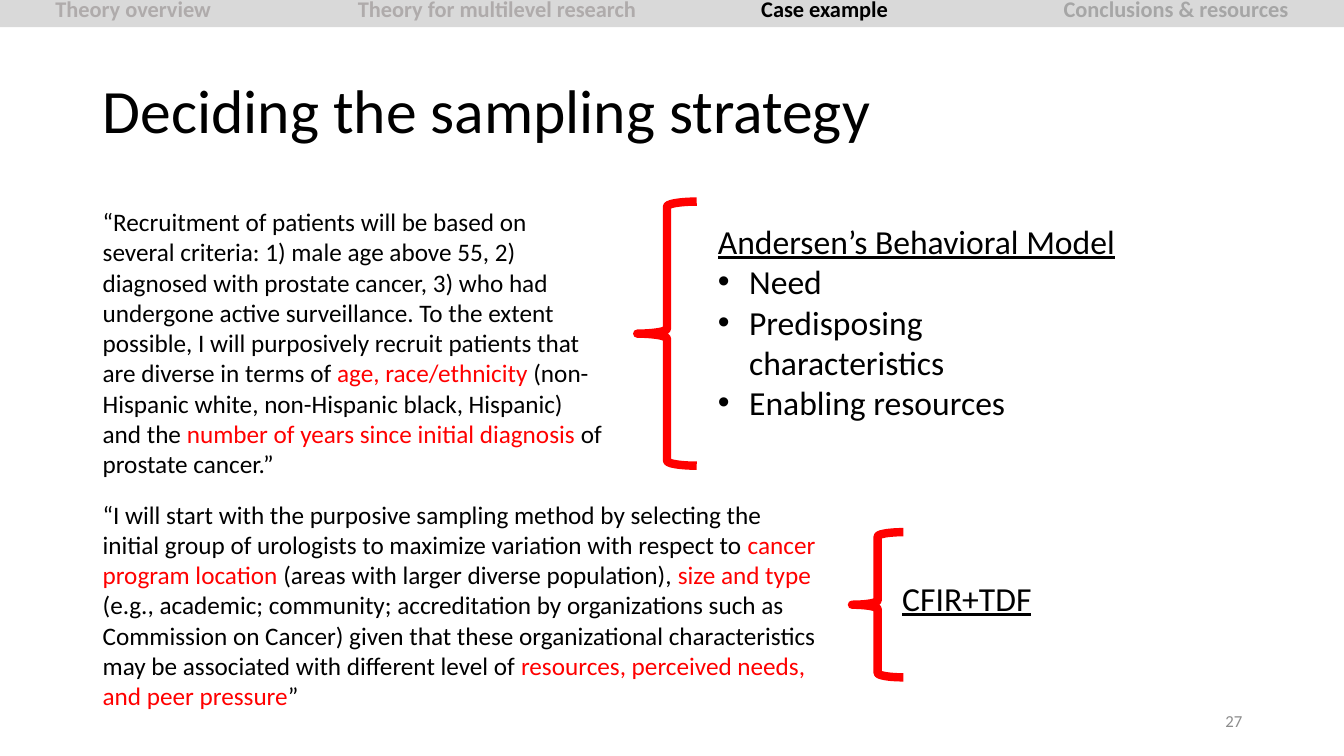
from pptx import Presentation
from pptx.dml.color import RGBColor
from pptx.enum.shapes import MSO_SHAPE
from pptx.enum.text import MSO_ANCHOR, MSO_AUTO_SIZE, PP_ALIGN
from pptx.oxml.ns import qn
from pptx.util import Inches, Pt
from lxml.etree import SubElement

BLACK, RED = "000000", "FF0000"


def color(code):
    return RGBColor.from_string(code)


def write(par, runs, size, bold=False, under=False):
    for text, code in runs:
        run = par.add_run()
        run.text = text
        font = run.font
        font.name, font.size = "Calibri", Pt(size)
        font.bold, font.underline = bold, under
        font.color.rgb = color(code)


deck = Presentation()
deck.slide_width, deck.slide_height = Inches(13.33), Inches(7.5)
slide = deck.slides.add_slide(deck.slide_layouts[1])
shapes = slide.shapes

# Title
title = shapes.title
title.left, title.top = Inches(0.92), Inches(0.4)
title.width, title.height = Inches(11.5), Inches(1.45)
frame = title.text_frame
frame.vertical_anchor = MSO_ANCHOR.MIDDLE
par = frame.paragraphs[0]
par.alignment, par.line_spacing = PP_ALIGN.LEFT, 0.9
write(par, [("Deciding the sampling strategy", BLACK)], 44)

# Section bar, with a tab stop at every inch
bar = shapes.add_shape(MSO_SHAPE.RECTANGLE, 0, Inches(-0.1), Inches(13.33), Inches(0.37))
bar.shadow.inherit = False
bar.fill.solid()
bar.fill.fore_color.rgb = color("D9D9D9")
bar.line.fill.background()
par = bar.text_frame.paragraphs[0]
par.alignment = PP_ALIGN.CENTER
tabs = SubElement(par._p.get_or_add_pPr(), qn("a:tabLst"))
for inch in range(1, 12):
    SubElement(tabs, qn("a:tab"), pos=str(Inches(inch)), algn="l")
write(par, [
    ("Theory overview\t\tTheory for multilevel research\t\t", "AFABAB"),
    ("Case example", BLACK),
    ("\t\tConclusions & resources", "A6A6A6"),
], 16, bold=True)

# Quotes, framework label and page number
patients = [
    ("“Recruitment of patients will be based on several criteria: 1) male age above 55, "
     "2) diagnosed with prostate cancer, 3) who had undergone active surveillance. "
     "To the extent possible, I will purposively recruit patients that are diverse "
     "in terms of ", BLACK),
    ("age, race/ethnicity ", RED),
    ("(non-Hispanic white, non-Hispanic black, Hispanic) and the ", BLACK),
    ("number of years since initial diagnosis ", RED),
    ("of prostate cancer.”", BLACK),
]
doctors = [
    ("“I will start with the purposive sampling method by selecting the initial group "
     "of urologists to maximize variation with respect to ", BLACK),
    ("cancer program location ", RED),
    ("(areas with larger diverse population), ", BLACK),
    ("size and type ", RED),
    ("(e.g., academic; community; accreditation by organizations such as Commission on "
     "Cancer) given that these organizational characteristics may be associated with "
     "different level of ", BLACK),
    ("resources, perceived needs, and peer pressure", RED),
    ("”", BLACK),
]
label = [("CFIR+TDF", BLACK)]
page = [("27", "8C8C8C")]
left, right = PP_ALIGN.LEFT, PP_ALIGN.RIGHT
top, middle = MSO_ANCHOR.TOP, MSO_ANCHOR.MIDDLE
for spot, runs, size, under, align, anchor in [
    ((0.92, 2, 5.16, 2.83), patients, 18, False, left, top),
    ((0.92, 4.9, 7.33, 2.22), doctors, 18, False, left, top),
    ((8.85, 5.68, 2.22, 0.5), label, 24, True, left, top),
    ((9.42, 6.95, 3, 0.4), page, 12, False, right, middle),
]:
    frame = shapes.add_textbox(*map(Inches, spot)).text_frame
    frame.word_wrap, frame.vertical_anchor = True, anchor
    frame.paragraphs[0].alignment = align
    write(frame.paragraphs[0], runs, size, under=under)

# Behavioral model list
body = slide.placeholders[1]
body.left, body.top = Inches(7.02), Inches(2.14)
body.width, body.height = Inches(4.23), Inches(2.12)
frame = body.text_frame
frame.auto_size, frame.vertical_anchor = MSO_AUTO_SIZE.NONE, top
items = ["Andersen’s Behavioral Model", "Need", "Predisposing characteristics",
         "Enabling resources"]
for row, item in enumerate(items):
    par = frame.add_paragraph() if row else frame.paragraphs[0]
    par.space_before = Pt(0)
    props = par._p.get_or_add_pPr()
    indent = Inches(0.31) if row else 0
    props.set("marL", str(indent))
    props.set("indent", str(-indent))
    if row:
        SubElement(props, qn("a:buFont"), typeface="Arial")
        SubElement(props, qn("a:buChar"), char="•")
    else:
        SubElement(props, qn("a:buNone"))
    write(par, [(item, BLACK)], 24, under=not row)

# Braces from each quote to its framework
for spot in [(6.32, 2, 0.59, 2.62), (8.45, 5.28, 0.51, 1.44)]:
    brace = shapes.add_shape(MSO_SHAPE.LEFT_BRACE, *map(Inches, spot))
    brace.shadow.inherit = False
    brace.fill.background()
    brace.line.color.rgb = color(RED)
    brace.line.width = Pt(6)

deck.save("out.pptx")
